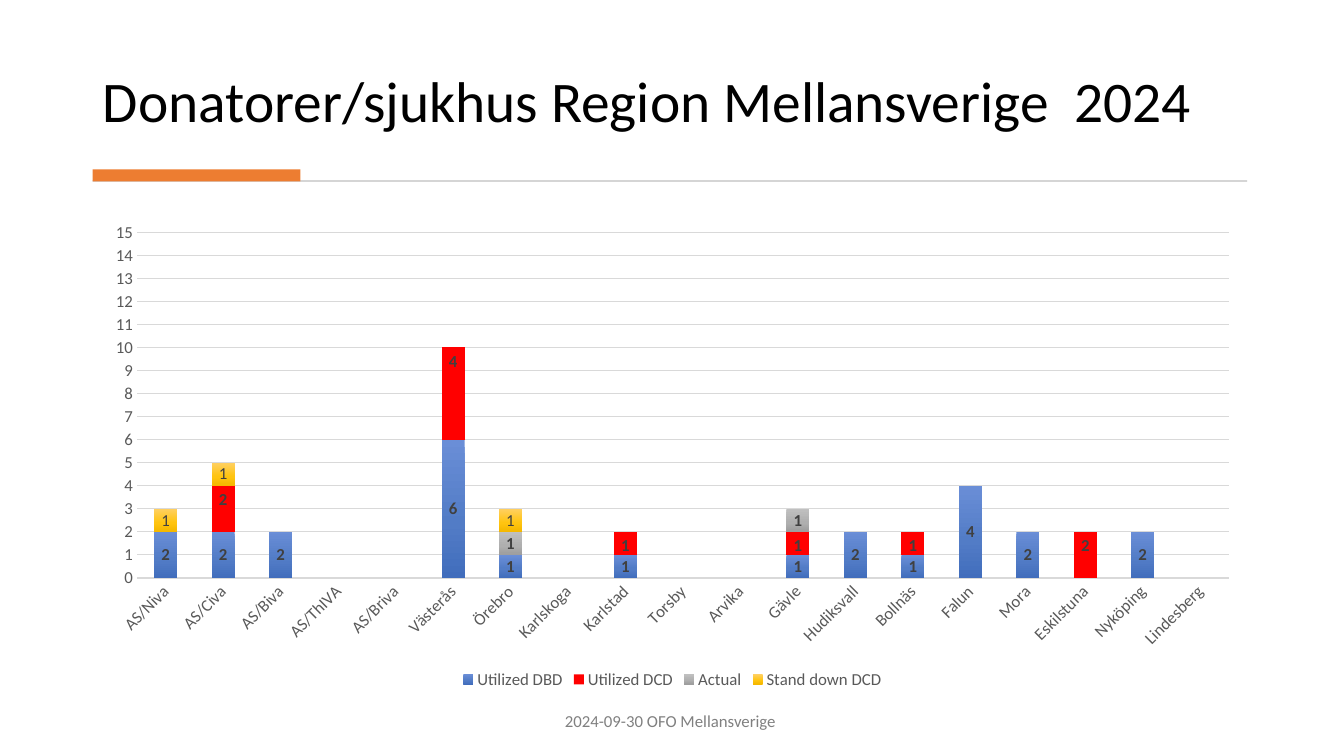
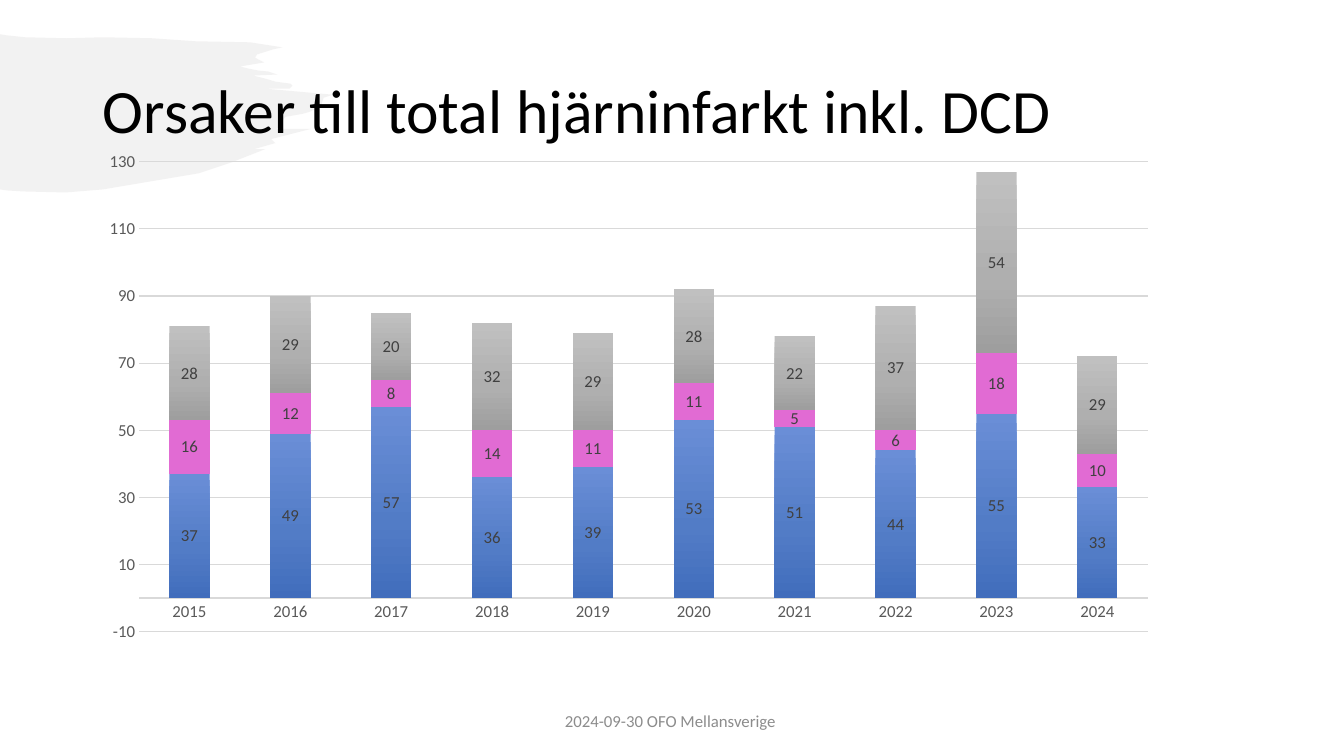
from dataclasses import dataclass

from pptx import Presentation
from pptx import util as u
from pptx.chart import data as cd
from pptx.dml import color as dc
from pptx.enum import chart as ce
from pptx.enum import shapes as sh
from pptx.enum import text as te
from pptx.oxml import ns, parse_xml


@dataclass(frozen=True)
class Theme:
    font: str = "Calibri"
    ink: str = "000000"
    axis: str = "595959"
    label: str = "404040"
    grid: str = "D9D9D9"
    rule: str = "D5D5D5"
    accent: str = "ED7D31"
    brush: str = "E7E6E6"
    foot: str = "808080"
    pale: str = "8C8C8C"
    red: tuple = ("FF0000",)
    pink: tuple = ("E16BD3",)
    blue: tuple = ("6A8ED7", "527CC6", "416DBC")
    grey: tuple = ("C0C0C0", "AFAFAF", "9E9E9E")
    gold: tuple = ("FFD063", "FFC410", "F5B800")
    small: int = 12
    mid: int = 41
    big: int = 44


T = Theme()
W, H = u.Inches(13.33), u.Inches(7.5)
LEFT, WIDE = 6.9, 86.27
FOOTER = "2024-09-30 OFO Mellansverige"

# Outline of the brush stroke, on a grid of 330 by 157
STROKE = [
    (0, 0), (6, 1), (25, 3), (66, 4), (102, 3), (151, 4), (194, 7), (248, 8),
    (280, 13), (271, 15), (255, 20), (253, 23), (256, 25), (262, 28),
    (238, 32), (246, 34), (256, 36), (266, 37), (275, 40), (251, 41),
    (263, 44), (273, 47), (280, 48), (288, 49), (290, 51), (287, 54),
    (263, 54), (330, 60), (321, 63), (318, 72), (307, 77), (300, 79),
    (283, 82), (280, 86), (278, 91), (274, 94), (308, 94), (269, 104),
    (273, 108), (252, 114), (263, 114), (230, 127), (197, 138), (102, 154),
    (65, 157), (23, 156), (7, 155), (0, 154),
]


def area(left, top, wide, high):
    """Turn percentages of the slide into a box."""
    return [round(n * side / 100)
            for n, side in zip((left, top, wide, high), (W, H, W, H))]


def rgb(code):
    return dc.RGBColor.from_string(code)


def style(font, size, color, bold=False):
    font.name, font.size, font.bold = T.font, u.Pt(size), bold
    font.color.rgb = rgb(color)


def write(shape, words, size=T.small, color=T.ink, align="LEFT",
          anchor="MIDDLE", line=None, after=None):
    frame = shape.text_frame
    frame.word_wrap = True
    frame.auto_size = te.MSO_AUTO_SIZE.NONE
    frame.vertical_anchor = te.MSO_ANCHOR[anchor]
    para = frame.paragraphs[0]
    para.alignment = te.PP_ALIGN[align]
    para.line_spacing = line
    para.space_after = after
    run = para.add_run()
    run.text = words
    style(run.font, size, color)


def paint(shape, color):
    shape.shadow.inherit = False
    shape.fill.solid()
    shape.fill.fore_color.rgb = rgb(color)
    shape.line.fill.background()


def start(deck, title, box, size, anchor, foot):
    """Add a slide with its title and footer."""
    slide = deck.slides.add_slide(deck.slide_layouts[5])
    head = slide.shapes.title
    head.left, head.top, head.width, head.height = box
    write(head, title, size=size, anchor=anchor, line=0.9)
    note = slide.shapes.add_textbox(*area(33, 92.67, 33.76, 5.33))
    write(note, FOOTER, color=foot, align="CENTER", after=u.Pt(6))
    return slide


def divide(slide, box):
    """Draw a thin rule with a thick accent at its left end."""
    left, top, wide, high = box
    parts = (
        (left, top + high * 0.9, wide, high * 0.15, T.rule),
        (left, top, wide * 0.18, high, T.accent),
    )
    for *place, color in parts:
        bar = slide.shapes.add_shape(sh.MSO_SHAPE.RECTANGLE, *map(round, place))
        paint(bar, color)


def brush(slide, box):
    """Draw the half-clear brush stroke behind the title."""
    left, top, wide, high = box
    pen = slide.shapes.build_freeform(*STROKE[0], scale=(wide / 330, high / 157))
    pen.add_line_segments(STROKE[1:], close=True)
    mark = pen.convert_to_shape(left, top)
    paint(mark, T.brush)
    tint = mark.element.spPr.find(".//" + ns.qn("a:srgbClr"))
    tint.append(parse_xml(f'<a:alpha {ns.nsdecls("a")} val="50000"/>'))
    tree = slide.shapes.title.element.getparent()
    tree.insert(tree.index(slide.shapes.title.element), mark.element)


def shade(series, tones):
    """Fill with one tone, or fade down through three."""
    fill = series.format.fill
    fill.solid()
    fill.fore_color.rgb = rgb(tones[0])
    if len(tones) > 1:
        stops = "".join(f'<a:gs pos="{pos}"><a:srgbClr val="{tone}"/></a:gs>'
                        for pos, tone in zip((0, 60000, 100000), tones))
        fade = parse_xml(f'<a:gradFill {ns.nsdecls("a")} rotWithShape="1">'
                         f'<a:gsLst>{stops}</a:gsLst>'
                         '<a:lin ang="5400000" scaled="0"/></a:gradFill>')
        props = series._element.spPr
        props.replace(props.find(ns.qn("a:solidFill")), fade)


def frame(chart, shares):
    """Fix the inner plot area as shares of the chart."""
    plot = chart.element.find(".//" + ns.qn("c:plotArea"))
    for old in plot.findall(ns.qn("c:layout")):
        plot.remove(old)
    sides = "".join(f'<c:{key} val="{val}"/>' for key, val in zip("xywh", shares))
    plot.insert(0, parse_xml(
        f'<c:layout {ns.nsdecls("c")}><c:manualLayout>'
        '<c:layoutTarget val="inner"/><c:xMode val="edge"/>'
        f'<c:yMode val="edge"/>{sides}</c:manualLayout></c:layout>'))


def stack(slide, box, cats, rows, low, high, step, names=None, turn=0,
          plot=None):
    """Add a stacked column chart, with a legend if its series have names.

    Each row holds values, tones, label place and label weight.
    """
    data = cd.CategoryChartData()
    data.categories = cats
    for name, (vals, *_) in zip(names or [""] * len(rows), rows):
        data.add_series(name, vals)
    chart = slide.shapes.add_chart(
        ce.XL_CHART_TYPE.COLUMN_STACKED, *box, data).chart
    chart.has_title = False
    style(chart.font, T.small, T.axis)

    # Axes
    cat, val = chart.category_axis, chart.value_axis
    for axis in (cat, val):
        axis.major_tick_mark = axis.minor_tick_mark = ce.XL_TICK_MARK.NONE
        style(axis.tick_labels.font, T.small, T.axis)
    cat.format.line.color.rgb = rgb(T.grid)
    cat.format.line.width = u.Pt(1)
    if turn:
        body = cat._element.find(".//" + ns.qn("a:bodyPr"))
        body.set("rot", str(turn * 60000))
    val.minimum_scale, val.maximum_scale, val.major_unit = low, high, step
    val.format.line.fill.background()
    val.has_major_gridlines = True
    val.major_gridlines.format.line.color.rgb = rgb(T.grid)
    val.major_gridlines.format.line.width = u.Pt(0.75)

    # Columns and their labels
    bars = chart.plots[0]
    bars.gap_width, bars.overlap, bars.vary_by_categories = 150, 100, False
    for series, (_, tones, place, bold) in zip(bars.series, rows):
        series.invert_if_negative = False
        shade(series, tones)
        tags = series.data_labels
        tags.show_value = True
        tags.position = ce.XL_LABEL_POSITION[place]
        style(tags.font, T.small, T.label, bold)

    # Legend and plot area
    chart.has_legend = bool(names)
    if names:
        chart.legend.position = ce.XL_LEGEND_POSITION.BOTTOM
        chart.legend.include_in_layout = False
        style(chart.legend.font, T.small, T.axis)
    if plot:
        frame(chart, plot)


def donors(deck):
    slide = start(deck, "Donatorer/sjukhus Region Mellansverige  2024",
                  area(LEFT, 3.73, WIDE, 14.8), T.mid, "BOTTOM", T.foot)
    divide(slide, area(LEFT, 22.4, 85.9, 1.6))
    cats = ["AS/Niva", "AS/Civa", "AS/Biva", "AS/ThIVA", "AS/Briva", "Västerås",
            "Örebro", "Karlskoga", "Karlstad", "Torsby", "Arvika", "Gävle",
            "Hudiksvall", "Bollnäs", "Falun", "Mora", "Eskilstuna", "Nyköping",
            "Lindesberg"]
    names = ["Utilized DBD", "Utilized DCD", "Actual", "Stand down DCD"]
    found = [
        ({"AS/Niva": 2, "AS/Civa": 2, "AS/Biva": 2, "Västerås": 6, "Örebro": 1,
          "Karlstad": 1, "Gävle": 1, "Hudiksvall": 2, "Bollnäs": 1, "Falun": 4,
          "Mora": 2, "Nyköping": 2}, T.blue, "CENTER", True),
        ({"AS/Civa": 2, "Västerås": 4, "Karlstad": 1, "Gävle": 1, "Bollnäs": 1,
          "Eskilstuna": 2}, T.red, "INSIDE_END", True),
        ({"Örebro": 1, "Gävle": 1}, T.grey, "CENTER", True),
        ({"AS/Niva": 1, "AS/Civa": 1, "Örebro": 1}, T.gold, "CENTER", False),
    ]
    rows = [([vals.get(cat) for cat in cats], *look) for vals, *look in found]
    stack(slide, area(LEFT, 28.13, WIDE, 63.6), cats, rows, 0, 15, 1,
          names=names, turn=-45)


def causes(deck):
    slide = start(deck, "Orsaker till total hjärninfarkt inkl. DCD",
                  area(LEFT, 5.33, WIDE, 19.33), T.big, "MIDDLE", T.pale)
    brush(slide, area(0, 4.53, 24.76, 20.93))
    counts = [
        ([37, 49, 57, 36, 39, 53, 51, 44, 55, 33], T.blue),
        ([16, 12, 8, 14, 11, 11, 5, 6, 18, 10], T.pink),
        ([28, 29, 20, 32, 29, 28, 22, 37, 54, 29], T.grey),
    ]
    rows = [(vals, tones, "CENTER", False) for vals, tones in counts]
    years = [str(year) for year in range(2015, 2025)]
    stack(slide, area(LEFT, 20, WIDE, 69.87), years, rows, -10, 130, 20,
          plot=(0.04, 0.02, 0.87, 0.89))


def main():
    deck = Presentation()
    deck.slide_width, deck.slide_height = W, H
    donors(deck)
    causes(deck)
    deck.save("out.pptx")


if __name__ == "__main__":
    main()
